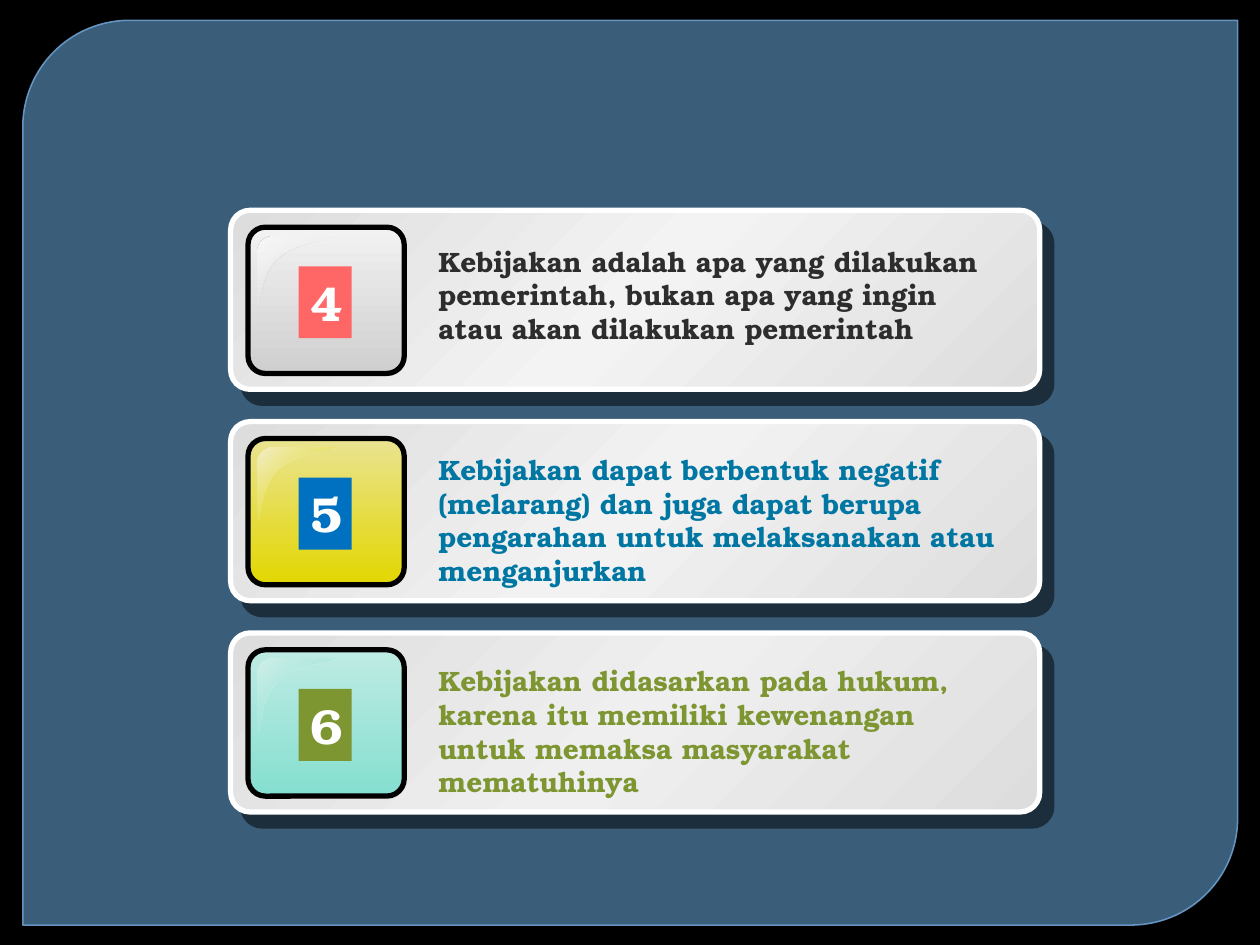
import pptx
import pptx.util
import pptx.dml.color
import pptx.enum.shapes
import pptx.enum.text
import pptx.oxml
import pptx.oxml.ns

Cm = pptx.util.Cm
Pt = pptx.util.Pt
SHAPES = pptx.enum.shapes.MSO_SHAPE
FONT = "TeX Gyre Bonum"


def color(value):
    return pptx.dml.color.RGBColor.from_string(value)


def set_gradient(shape, angle, stops):
    """Fill with (position, colour, opacity) stops; the angle runs clockwise."""
    shape.fill.gradient()
    shape.fill.gradient_angle = 360 - angle
    stop_list = shape._element.spPr.find(".//" + pptx.oxml.ns.qn("a:gsLst"))
    for old_stop in list(stop_list):
        stop_list.remove(old_stop)
    for position, value, opacity in stops:
        stop_list.append(pptx.oxml.parse_xml(
            f'<a:gs {pptx.oxml.ns.nsdecls("a")} pos="{position * 1000}">'
            f'<a:srgbClr val="{value}"><a:alpha val="{opacity * 1000}"/></a:srgbClr></a:gs>'))


presentation = pptx.Presentation()
presentation.slide_width = Cm(25.4)
presentation.slide_height = Cm(19.05)
slide = presentation.slides.add_slide(presentation.slide_layouts[6])

# Black background with a translucent blue panel
slide.background.fill.solid()
slide.background.fill.fore_color.rgb = color("000000")
panel = slide.shapes.add_shape(
    SHAPES.ROUND_2_DIAG_RECTANGLE, Cm(0.46), Cm(0.41), Cm(24.49), Cm(18.24))
panel.adjustments[0] = 0.118
panel.adjustments[1] = 0
panel.shadow.inherit = False
panel.fill.solid()
panel.fill.fore_color.rgb = color("5A90BC")
panel.line.color.rgb = color("6EA3D2")
panel.line.width = Pt(0.87)
for path_to_color, opacity in (("a:solidFill", 65), ("a:ln/a:solidFill", 88)):
    solid = panel._element.spPr.find(
        "/".join(pptx.oxml.ns.qn(tag) for tag in path_to_color.split("/")))
    solid[0].append(pptx.oxml.parse_xml(
        f'<a:alpha {pptx.oxml.ns.nsdecls("a")} val="{opacity * 1000}"/>'))

# Outline of the gloss on each tile: Bezier segments (start, two controls, end) in cm
gloss_curves = [
    ((0.3, 0), (0.14, 0), (0, 0.13), (0, 0.3)),
    ((0, 1.46), (0.08, 1.49), (0.03, 0.77), (0.43, 0.43)),
    ((0.43, 0.43), (0.81, 0.1), (1.57, 0.07), (1.56, 0)),
]
gloss_points = []
for curve in gloss_curves:
    for step in range(13):
        t = step / 12
        weights = ((1 - t) ** 3, 3 * t * (1 - t) ** 2, 3 * t ** 2 * (1 - t), t ** 3)
        gloss_points.append([
            sum(weight * point[axis] for weight, point in zip(weights, curve))
            for axis in (0, 1)])

# Number, text, text colour, badge colour, card middle, tile gradient, gloss stops,
# text offset and height in cm
rows = [
    ("4", "Kebijakan adalah apa yang dilakukan pemerintah, bukan apa yang ingin "
     "atau akan dilakukan pemerintah", "2D2D2D", "FF6666", "F3F3F3",
     ("F2F2F2", "CFCFCF"),
     [(0, "F8F8F8", 100), (50, "F2F2F2", 0), (100, "F8F8F8", 100)], 0.56, 2.31),
    ("5", "Kebijakan dapat berbentuk negatif (melarang) dan juga dapat berupa "
     "pengarahan untuk melaksanakan atau menganjurkan", "0076A3", "0070C0", "F2F2F2",
     ("EAE391", "E2D700"), [(0, "F3EFC9", 100), (100, "E2D700", 0)], 0.5, 3),
    ("6", "Kebijakan didasarkan pada hukum, karena itu memiliki kewenangan "
     "untuk memaksa masyarakat mematuhinya", "7E9632", "7E9632", "EFEFEF",
     ("BEEBE3", "85DFD0"), [(0, "D0F0EA", 100), (100, "85DFD0", 0)], 0.5, 2.31),
]

for index, (number, text, text_color, badge_color, card_middle, tile_colors,
            gloss_stops, text_offset, text_height) in enumerate(rows):
    top = 4.24 + 4.26 * index
    shapes = slide.shapes.add_group_shape().shapes

    # Card with a hard shadow, and the tile on it
    card = shapes.add_shape(
        SHAPES.ROUNDED_RECTANGLE, Cm(4.65), Cm(top), Cm(16.31), Cm(3.61))
    tile = shapes.add_shape(
        SHAPES.ROUNDED_RECTANGLE, Cm(5), Cm(top + 0.34), Cm(3.15), Cm(2.95))
    for shape, radius, line_color in ((card, 0.109, "FFFFFF"), (tile, 0.119, "000000")):
        shape.adjustments[0] = radius
        shape.shadow.inherit = False
        shape.line.color.rgb = color(line_color)
        shape.line.width = Pt(3)
    set_gradient(card, 45, [(0, "DDDDDD", 100), (50, card_middle, 100), (100, "DDDDDD", 100)])
    set_gradient(tile, 90, [(0, tile_colors[0], 100), (100, tile_colors[1], 100)])
    effects = card._element.spPr.find(pptx.oxml.ns.qn("a:effectLst"))
    effects.append(pptx.oxml.parse_xml(
        f'<a:outerShdw {pptx.oxml.ns.nsdecls("a")} blurRad="0" dist="{Pt(10.6)}" '
        f'dir="{49 * 60000}" algn="ctr" rotWithShape="0">'
        '<a:srgbClr val="000000"><a:alpha val="50000"/></a:srgbClr></a:outerShdw>'))

    # Gloss in the tile's corner
    outline = [(Cm(5.2 + x), Cm(top + 0.52 + y)) for x, y in gloss_points]
    builder = shapes.build_freeform(*outline[0])
    builder.add_line_segments(outline[1:], close=True)
    gloss = builder.convert_to_shape()
    gloss.shadow.inherit = False
    gloss.line.fill.background()
    set_gradient(gloss, 45, gloss_stops)

    # Number badge
    badge = shapes.add_shape(
        SHAPES.RECTANGLE, Cm(6.02), Cm(top + 1.13), Cm(1.07), Cm(1.45))
    badge.shadow.inherit = False
    badge.fill.solid()
    badge.fill.fore_color.rgb = color(badge_color)
    badge.line.fill.background()

    # Statement, and the lettering of both
    statement = shapes.add_textbox(
        Cm(8.59), Cm(top + text_offset), Cm(11.99), Cm(text_height))
    for shape, words, size, font_color, wrap, alignment in (
            (badge, number, 28, "FFFFFF", False, pptx.enum.text.PP_ALIGN.CENTER),
            (statement, text, 16, text_color, True, pptx.enum.text.PP_ALIGN.LEFT)):
        frame = shape.text_frame
        frame.word_wrap = wrap
        frame.auto_size = pptx.enum.text.MSO_AUTO_SIZE.SHAPE_TO_FIT_TEXT
        frame.vertical_anchor = pptx.enum.text.MSO_ANCHOR.TOP
        paragraph = frame.paragraphs[0]
        paragraph.alignment = alignment
        run = paragraph.add_run()
        run.text = words
        run.font.name = FONT
        run.font.size = Pt(size)
        run.font.bold = True
        run.font.color.rgb = color(font_color)

presentation.save("out.pptx")
